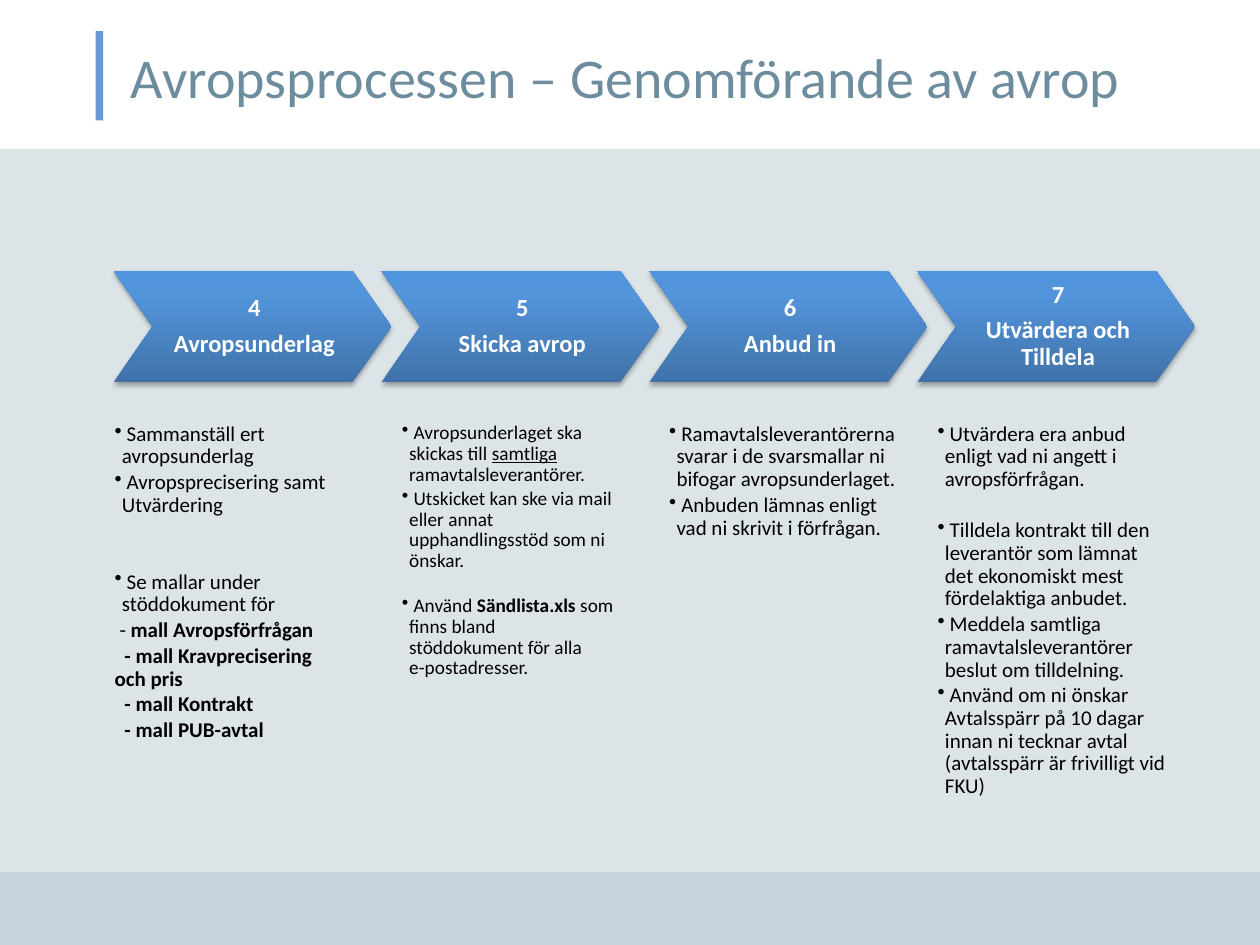
import copy

import pptx
import pptx.dml.color
import pptx.enum.shapes
import pptx.enum.text
import pptx.oxml
import pptx.oxml.ns
import pptx.util

Cm = pptx.util.Cm
Pt = pptx.util.Pt
RGB = pptx.dml.color.RGBColor.from_string
SHAPE = pptx.enum.shapes.MSO_SHAPE
ANCHOR = pptx.enum.text.MSO_ANCHOR
qn = pptx.oxml.ns.qn
NS = pptx.oxml.ns.nsdecls("a")


class Theme:
    font = "Calibri"
    heading = "6D8D9F"
    surface = "C6D3DA"
    accent = "669AD2"
    step_stops = [(0, "4072A9"), (0.8, "5395DB"), (1, "5195DF")]
    step_text = "FFFFFF"
    body_text = "000000"
    title_size = 32
    step_size = 14
    body_size = 12
    small_size = 11


def style_run(run, size, color, bold=False, underline=False):
    run.font.name = Theme.font
    run.font.size = Pt(size)
    run.font.color.rgb = RGB(color)
    run.font.bold = bold
    run.font.underline = underline


def set_frame(frame, anchor, left=0, top=0, right=0, bottom=0):
    frame.word_wrap = True
    frame.vertical_anchor = anchor
    frame.margin_left, frame.margin_top = Cm(left), Cm(top)
    frame.margin_right, frame.margin_bottom = Cm(right), Cm(bottom)


deck = pptx.Presentation()
deck.slide_width, deck.slide_height = Cm(25.4), Cm(19.05)
slide = deck.slides.add_slide(deck.slide_layouts[6])

panels = [
    (0, 3, 25.4, 14.58, Theme.surface, 60),
    (0, 17.58, 25.4, 1.47, Theme.surface, 100),
    (1.93, 0.63, 0.15, 1.8, Theme.accent, 100),
]
for left, top, width, height, color, opacity in panels:
    panel = slide.shapes.add_shape(SHAPE.RECTANGLE, Cm(left), Cm(top), Cm(width), Cm(height))
    panel.shadow.inherit = False
    panel.line.fill.background()
    panel.fill.solid()
    panel.fill.fore_color.rgb = RGB(color)
    if opacity < 100:
        tint = panel.fill._xPr.find(".//" + qn("a:srgbClr"))
        tint.append(pptx.oxml.parse_xml(f'<a:alpha {NS} val="{opacity * 1000}"/>'))

title = slide.shapes.add_textbox(Cm(1.98), Cm(0.46), Cm(21.46), Cm(2.13)).text_frame
set_frame(title, ANCHOR.MIDDLE, 0.66, 0.1, 0.25, 0.1)
title.text = "Avropsprocessen – Genomförande av avrop"
style_run(title.paragraphs[0].runs[0], Theme.title_size, Theme.heading)

steps = ["Avropsunderlag", "Skicka avrop", "Anbud in", "Utvärdera och Tilldela"]
for index, label in enumerate(steps):
    step = slide.shapes.add_shape(
        SHAPE.CHEVRON, Cm(2.29 + 5.4 * index), Cm(5.46), Cm(5.6), Cm(2.25))
    step.adjustments[0] = 0.35
    step.line.fill.background()
    step.fill.gradient()
    step.fill.gradient_angle = 90
    stop_list = step.fill._xPr.find(".//" + qn("a:gsLst"))
    stop_list.append(copy.deepcopy(stop_list[-1]))
    for stop, (position, color) in zip(step.fill.gradient_stops, Theme.step_stops):
        stop.position = position
        stop.color.rgb = RGB(color)
    step.shadow.inherit = False
    step.fill._xPr.find(qn("a:effectLst")).append(pptx.oxml.parse_xml(
        f'<a:outerShdw {NS} blurRad="39370" dist="22860" dir="5400000" rotWithShape="0">'
        '<a:srgbClr val="000000"><a:alpha val="35000"/></a:srgbClr></a:outerShdw>'))
    set_frame(step.text_frame, ANCHOR.MIDDLE, 0.08, 0.03, 0, 0.03)
    step.text_frame.text = f"{index + 4}\n{label}"
    for paragraph in step.text_frame.paragraphs:
        paragraph.alignment = pptx.enum.text.PP_ALIGN.CENTER
        paragraph.line_spacing = 0.9
        paragraph.space_after = Pt(5)
        style_run(paragraph.runs[0], Theme.step_size, Theme.step_text, bold=True)

PLAIN, BOLD, UNDERLINE, BREAK = {}, {"bold": True}, {"underline": True}, None
BULLET, FIRST_DASH, DASH = (0.15, -0.15), (0, 0.1), (0, 0.2)

columns = [
    (2.31, 4.6, Theme.body_size, [
        (BULLET, 0, [(" Sammanställ ert avropsunderlag", PLAIN)]),
        (BULLET, 0, [(" Avropsprecisering samt Utvärdering", PLAIN)]),
        (BULLET, 29, [(" Se mallar under stöddokument för", PLAIN)]),
        (FIRST_DASH, 0, [("- ", PLAIN), ("mall Avropsförfrågan", BOLD)]),
        (DASH, 0, [("- mall Kravprecisering och pris", BOLD)]),
        (DASH, 0, [("- mall Kontrakt", BOLD)]),
        (DASH, 0, [("- mall PUB-avtal", BOLD)]),
    ]),
    (8.1, 4.29, Theme.small_size, [
        (BULLET, 0, [(" Avropsunderlaget ska skickas till ", PLAIN), ("samtliga", UNDERLINE),
                     (" ramavtalsleverantörer.", PLAIN)]),
        (BULLET, 0, [(" Utskicket kan ske via mail eller annat upphandlingsstöd som ni önskar.",
                      PLAIN)]),
        (BULLET, 12, [(" Använd ", PLAIN), ("Sändlista.xls", BOLD),
                      (" som finns bland stöddokument för alla", PLAIN), ("", BREAK),
                      ("e-postadresser.", PLAIN)]),
    ]),
    (13.49, 4.8, Theme.body_size, [
        (BULLET, 0, [(" Ramavtalsleverantörerna svarar i de svarsmallar ni bifogar "
                      "avropsunderlaget.", PLAIN)]),
        (BULLET, 0, [(" Anbuden lämnas enligt vad ni skrivit i förfrågan.", PLAIN)]),
    ]),
    (18.9, 4.6, Theme.body_size, [
        (BULLET, 0, [(" Utvärdera era anbud enligt vad ni angett i avropsförfrågan.", PLAIN)]),
        (BULLET, 14.5, [(" Tilldela kontrakt till den leverantör som lämnat det ekonomiskt "
                         "mest fördelaktiga anbudet.", PLAIN)]),
        (BULLET, 0, [(" Meddela samtliga ramavtalsleverantörer beslut om tilldelning.", PLAIN)]),
        (BULLET, 0, [(" Använd om ni önskar Avtalsspärr på 10 dagar innan ni tecknar avtal "
                      "(avtalsspärr är frivilligt vid FKU)", PLAIN)]),
    ]),
]
for left, width, size, items in columns:
    details = slide.shapes.add_textbox(Cm(left), Cm(8.53), Cm(width), Cm(8.61)).text_frame
    set_frame(details, ANCHOR.TOP)
    for index, (indents, gap, segments) in enumerate(items):
        item = details.add_paragraph() if index else details.paragraphs[0]
        item.line_spacing = 0.9
        item.space_after = Pt(1.8)
        if gap:
            item.space_before = Pt(gap)
        margin, indent = indents
        properties = item._p.get_or_add_pPr()
        properties.set("marL", str(Cm(margin)))
        properties.set("indent", str(Cm(indent)))
        if indents == BULLET:
            properties.append(pptx.oxml.parse_xml(f'<a:buChar {NS} char="•"/>'))
        for words, emphasis in segments:
            if emphasis is BREAK:
                item.add_line_break()
                continue
            run = item.add_run()
            run.text = words
            style_run(run, size, Theme.body_text, **emphasis)

deck.save("out.pptx")
